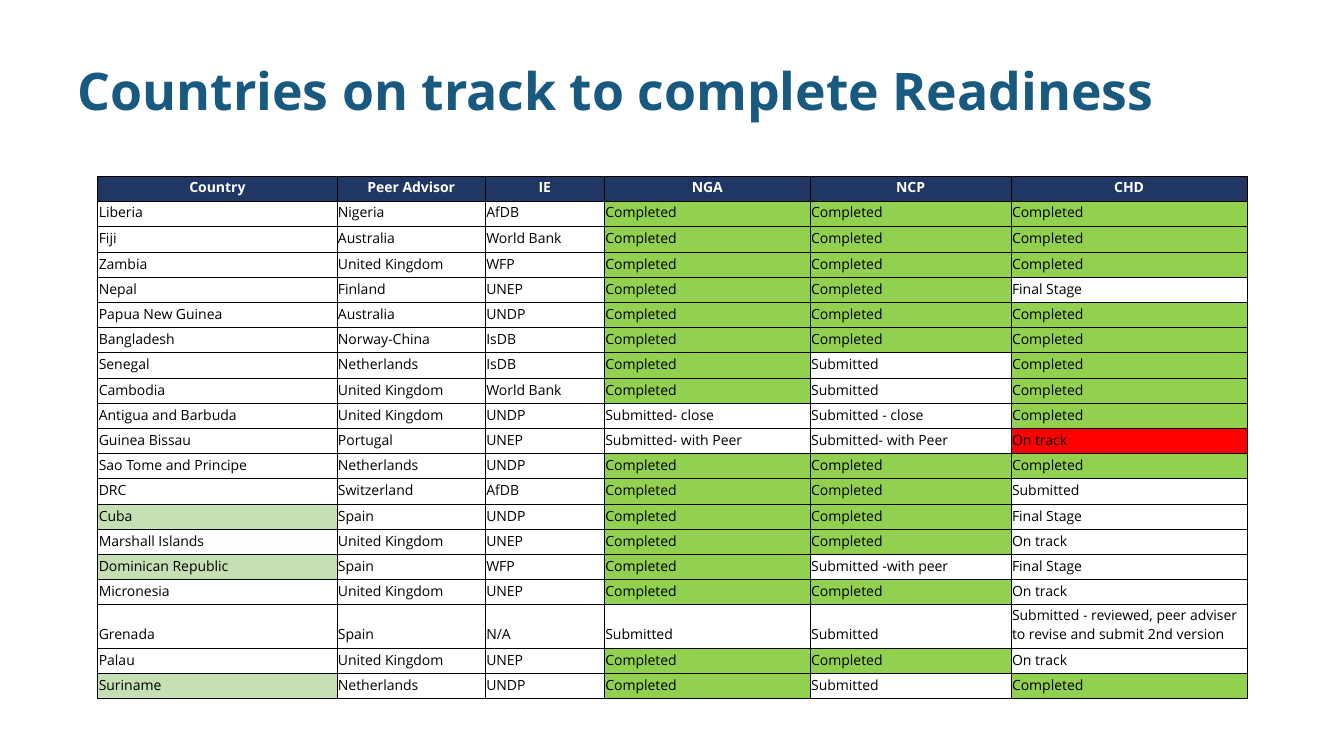
import pptx
import pptx.dml.color
import pptx.enum.text
import pptx.oxml
import pptx.oxml.ns
import pptx.util

Inches = pptx.util.Inches
Pt = pptx.util.Pt
Anchor = pptx.enum.text.MSO_ANCHOR
Align = pptx.enum.text.PP_ALIGN

FONT = "Open Sans"
COLORS = {
    "title": "185980",
    "header": "203764",
    "header_text": "FFFFFF",
    "text": "000000",
    "border": "000000",
    "completed": "92D050",
    "late": "FF0000",
    "highlight": "C6E0B4",
}
HEADER = ["Country", "Peer Advisor", "IE", "NGA", "NCP", "CHD"]
DONE = "Completed"
COUNTRIES = [
    ["Liberia", "Nigeria", "AfDB", DONE, DONE, DONE],
    ["Fiji", "Australia", "World Bank", DONE, DONE, DONE],
    ["Zambia", "United Kingdom", "WFP", DONE, DONE, DONE],
    ["Nepal", "Finland", "UNEP", DONE, DONE, "Final Stage"],
    ["Papua New Guinea", "Australia", "UNDP", DONE, DONE, DONE],
    ["Bangladesh", "Norway-China", "IsDB", DONE, DONE, DONE],
    ["Senegal", "Netherlands", "IsDB", DONE, "Submitted", DONE],
    ["Cambodia", "United Kingdom", "World Bank", DONE, "Submitted", DONE],
    ["Antigua and Barbuda", "United Kingdom", "UNDP", "Submitted- close", "Submitted - close", DONE],
    ["Guinea Bissau", "Portugal", "UNEP", "Submitted- with Peer", "Submitted- with Peer", "On track"],
    ["Sao Tome and Principe", "Netherlands", "UNDP", DONE, DONE, DONE],
    ["DRC", "Switzerland", "AfDB", DONE, DONE, "Submitted"],
    ["Cuba", "Spain", "UNDP", DONE, DONE, "Final Stage"],
    ["Marshall Islands", "United Kingdom", "UNEP", DONE, DONE, "On track"],
    ["Dominican Republic", "Spain", "WFP", DONE, "Submitted -with peer", "Final Stage"],
    ["Micronesia", "United Kingdom", "UNEP", DONE, DONE, "On track"],
    ["Grenada", "Spain", "N/A", "Submitted", "Submitted",
     "Submitted - reviewed, peer adviser to revise and submit 2nd version"],
    ["Palau", "United Kingdom", "UNEP", DONE, DONE, "On track"],
    ["Suriname", "Netherlands", "UNDP", DONE, "Submitted", DONE],
]
HIGHLIGHTED = {"Cuba", "Dominican Republic", "Suriname"}
LATE = ("Guinea Bissau", "CHD")
COLUMN_WIDTHS = [2.37, 1.47, 1.18, 2.04, 1.99, 2.34]
ROW_HEIGHT = 0.25


def rgb(name):
    return pptx.dml.color.RGBColor.from_string(COLORS[name])


def style_text(paragraph, size, color, bold):
    for run in paragraph.runs:
        run.font.name = FONT
        run.font.size = Pt(size)
        run.font.bold = bold
        run.font.color.rgb = rgb(color)


def add_title(slide, left, top, width, height):
    title = slide.shapes.title
    title.left, title.top = Inches(left), Inches(top)
    title.width, title.height = Inches(width), Inches(height)
    frame = title.text_frame
    frame.text = "Countries on track to complete Readiness"
    frame.auto_size = pptx.enum.text.MSO_AUTO_SIZE.NONE
    frame.vertical_anchor = Anchor.MIDDLE
    heading = frame.paragraphs[0]
    heading.alignment = Align.LEFT
    heading.line_spacing = 0.9
    style_text(heading, 37, "title", True)


def fill_name(country, column, status):
    """Return the colour name for a country's cell, or None for no fill."""
    if (country, column) == LATE:
        return "late"
    if status == DONE:
        return "completed"
    if column == "Country" and country in HIGHLIGHTED:
        return "highlight"
    return None


def add_borders(cell):
    properties = cell._tc.get_or_add_tcPr()
    for position, side in enumerate(("lnL", "lnR", "lnT", "lnB")):
        border = pptx.oxml.parse_xml(
            f'<a:{side} {pptx.oxml.ns.nsdecls("a")} w="{Pt(0.5)}"><a:solidFill>'
            f'<a:srgbClr val="{COLORS["border"]}"/></a:solidFill></a:{side}>')
        properties.insert(position, border)


def fill_cell(cell, text, fill, anchor, is_header=False):
    cell.text_frame.text = text
    cell.vertical_anchor = anchor
    cell.margin_left = cell.margin_right = cell.margin_top = Inches(0.01)
    cell.margin_bottom = Inches(0.04)
    if fill:
        cell.fill.solid()
        cell.fill.fore_color.rgb = rgb(fill)
    else:
        cell.fill.background()
    paragraph = cell.text_frame.paragraphs[0]
    paragraph.alignment = Align.CENTER if is_header else Align.LEFT
    style_text(paragraph, 10, "header_text" if is_header else "text", is_header)
    add_borders(cell)


def add_readiness_table(slide, left, top, width):
    row_count = len(COUNTRIES) + 1
    readiness = slide.shapes.add_table(
        row_count, len(HEADER), Inches(left), Inches(top),
        Inches(width), Inches(ROW_HEIGHT * row_count)).table
    readiness.first_row = readiness.horz_banding = False
    for column, share in zip(readiness.columns, COLUMN_WIDTHS):
        column.width = Inches(width * share / sum(COLUMN_WIDTHS))
    for row in readiness.rows:
        row.height = Inches(ROW_HEIGHT)
    for c, heading in enumerate(HEADER):
        fill_cell(readiness.cell(0, c), heading, "header", Anchor.MIDDLE, True)
    for r, entry in enumerate(COUNTRIES, start=1):
        anchor = Anchor.TOP if r == 1 else Anchor.BOTTOM
        for c, (heading, text) in enumerate(zip(HEADER, entry)):
            fill_cell(readiness.cell(r, c), text, fill_name(entry[0], heading, text), anchor)


def main():
    deck = pptx.Presentation()
    deck.slide_width, deck.slide_height = Inches(13.33), Inches(7.5)
    slide = deck.slides.add_slide(deck.slide_layouts[5])
    add_title(slide, 0.67, 0.3, 12, 1.25)
    add_readiness_table(slide, 0.97, 1.75, 11.4)
    deck.save("out.pptx")


if __name__ == "__main__":
    main()
